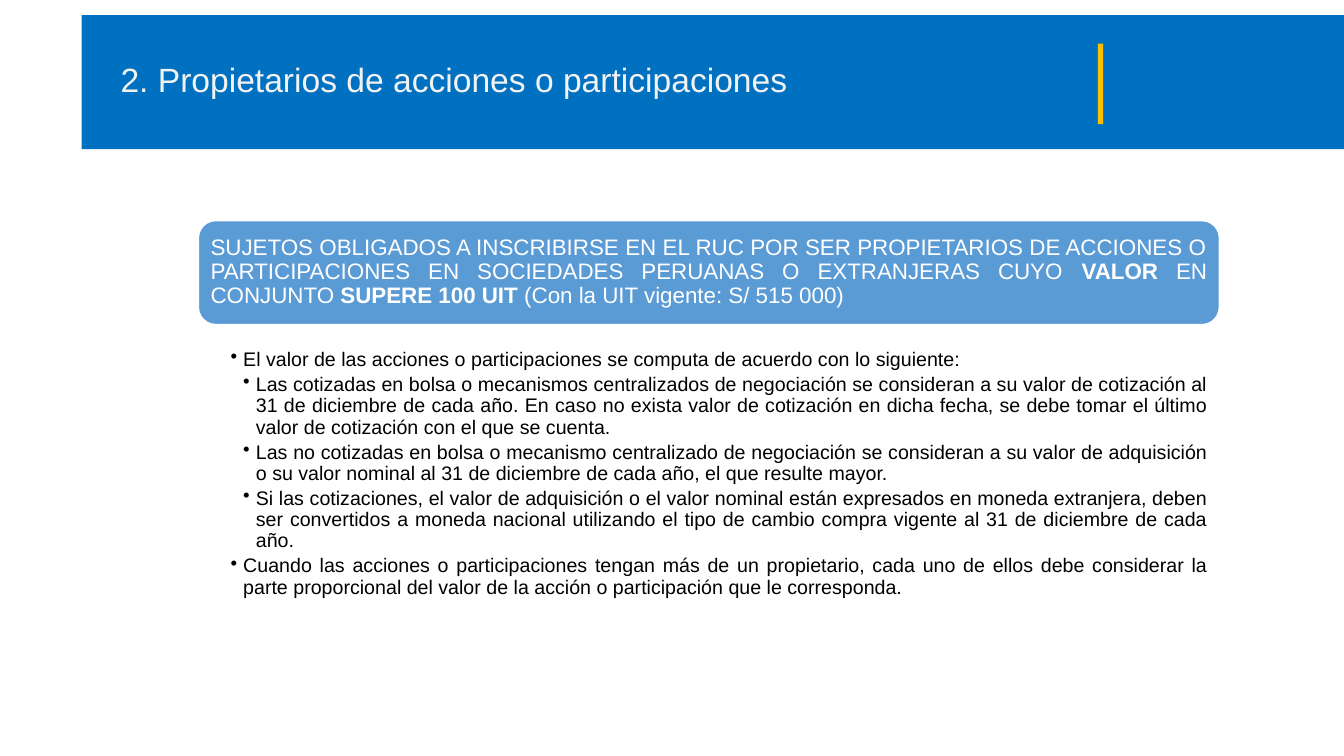
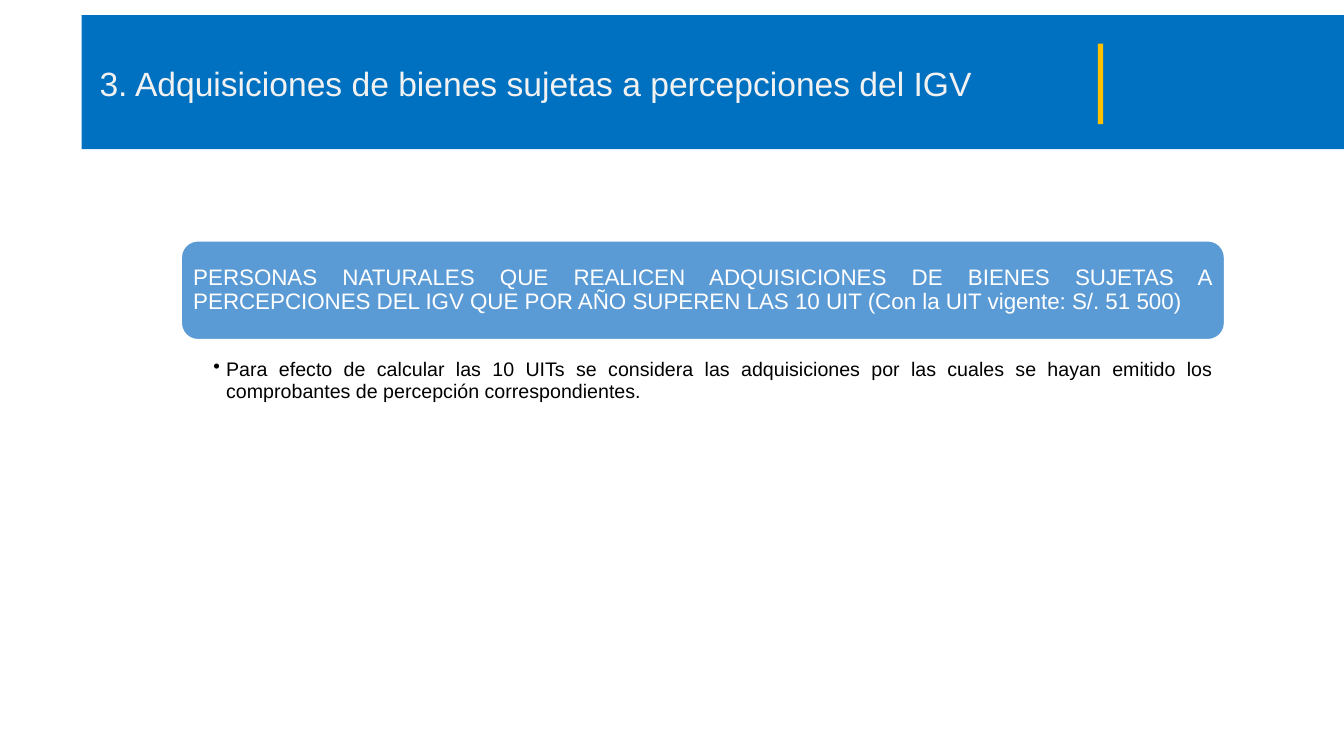
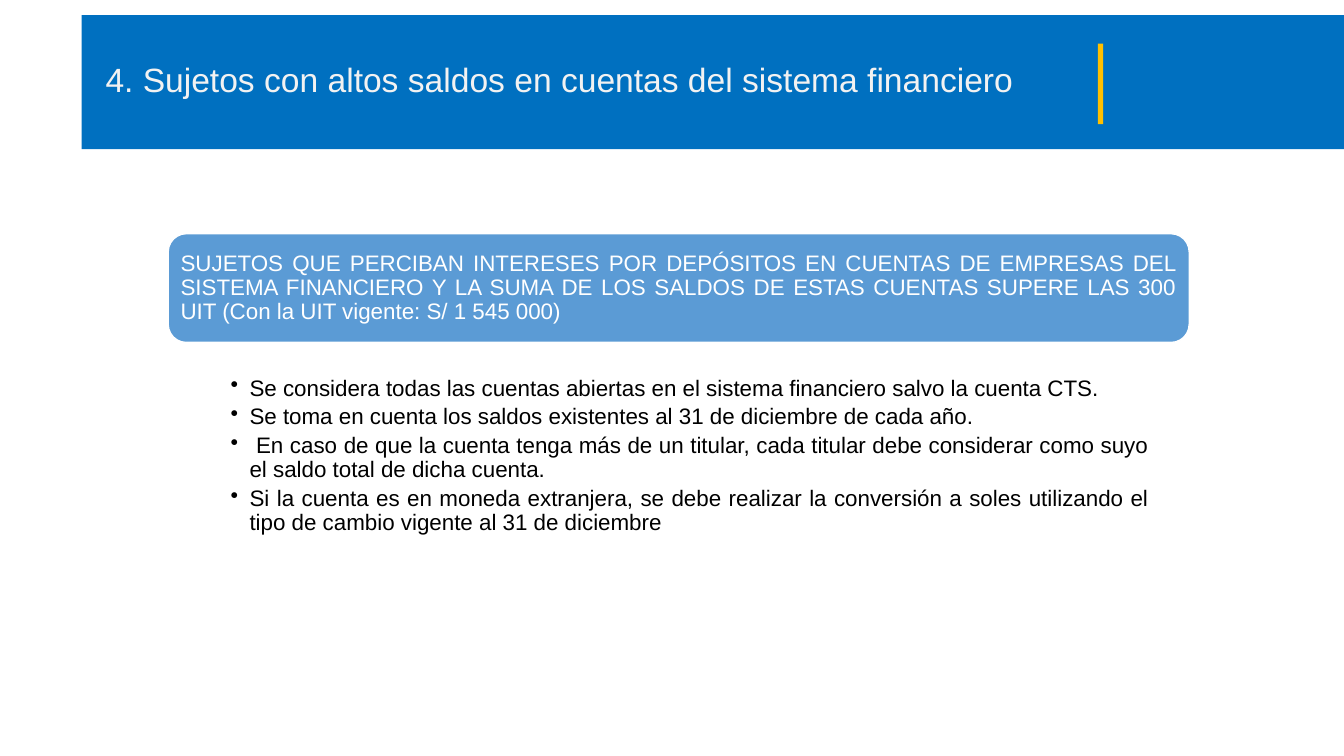
"""Build three slides on who must register in the RUC."""
from lxml import etree
from pptx import Presentation
from pptx import util as u
from pptx.dml.color import RGBColor
from pptx.enum import shapes, text
from pptx.oxml.ns import qn

BLUE = RGBColor(0x00, 0x70, 0xC0)
YELLOW = RGBColor(0xFF, 0xC0, 0x00)
SKY = RGBColor(0x5B, 0x9B, 0xD5)
WHITE = RGBColor(0xFF, 0xFF, 0xFF)
PALE = RGBColor(0xF2, 0xF2, 0xF2)
BLACK = RGBColor(0x00, 0x00, 0x00)

FONT = "Arial"
SLIDE_SIZE = (33.87, 19.05)
BAND_LEFT = 2.06
BAND = (BAND_LEFT, 0.38, SLIDE_SIZE[0] - BAND_LEFT, 3.38)
ACCENT = (27.67, 1.1, 0.13, 2.03)
TITLE_HEIGHT = 1.27

JUSTIFIED = {"alignment": text.PP_ALIGN.JUSTIFY, "line_spacing": 0.9}
TITLE_INSETS = {"word_wrap": True}
HEADING_INSETS = {
    "word_wrap": True, "vertical_anchor": text.MSO_ANCHOR.MIDDLE,
    "margin_left": u.Cm(0.18), "margin_right": u.Cm(0.18),
    "margin_top": u.Cm(0.18), "margin_bottom": u.Cm(0.18),
}
RULES_INSETS = {
    "word_wrap": True, "margin_left": u.Cm(0.81), "margin_right": u.Cm(0.28),
    "margin_top": u.Cm(0.05), "margin_bottom": u.Cm(0.05),
}

TOPICS = [
    {
        "title": "2. Propietarios de acciones o participaciones",
        "title_at": (2.79, 1.35),
        "heading": [
            ("SUJETOS OBLIGADOS A INSCRIBIRSE EN EL RUC POR SER PROPIETARIOS DE ACCIONES O "
             "PARTICIPACIONES EN SOCIEDADES PERUANAS O EXTRANJERAS CUYO ", False),
            ("VALOR", True),
            (" EN CONJUNTO ", False),
            ("SUPERE 100 UIT ", True),
            ("(Con la UIT vigente: S/ 515 000)", False),
        ],
        "heading_at": (5, 5.56, 25.73, 2.62),
        "rules": [
            (1, "El valor de las acciones o participaciones se computa de acuerdo con lo siguiente:"),
            (2, "Las cotizadas en bolsa o mecanismos centralizados de negociación se consideran a su "
                "valor de cotización al 31 de diciembre de cada año. En caso no exista valor de "
                "cotización en dicha fecha, se debe tomar el último valor de cotización con el que "
                "se cuenta."),
            (2, "Las no cotizadas en bolsa o mecanismo centralizado de negociación se consideran a su "
                "valor de adquisición o su valor nominal al 31 de diciembre de cada año, el que "
                "resulte mayor."),
            (2, "Si las cotizaciones, el valor de adquisición o el valor nominal están expresados en "
                "moneda extranjera, deben ser convertidos a moneda nacional utilizando el tipo de "
                "cambio compra vigente al 31 de diciembre de cada año."),
            (1, "Cuando las acciones o participaciones tengan más de un propietario, cada uno de ellos "
                "debe considerar la parte proporcional del valor de la acción o participación que le "
                "corresponda."),
        ],
        "rules_at": (5, 8.76, 25.73, 6.81),
        "rules_size": 14,
        "indent": 0.32,
    },
    {
        "title": "3. Adquisiciones de bienes sujetas a percepciones del IGV",
        "title_at": (2.26, 1.47),
        "heading": [
            ("PERSONAS NATURALES QUE REALICEN ADQUISICIONES DE BIENES SUJETAS A PERCEPCIONES DEL IGV "
             "QUE POR AÑO SUPEREN LAS 10 UIT (Con la UIT vigente: S/. 51 500)", False),
        ],
        "heading_at": (4.57, 6.07, 26.29, 2.49),
        "rules": [
            (1, "Para efecto de calcular las 10 UITs se considera las adquisiciones por las cuales se "
                "hayan emitido los comprobantes de percepción correspondientes."),
        ],
        "rules_at": (4.57, 9.02, 26.29, 6.78),
        "rules_size": 14,
        "indent": 0.32,
    },
    {
        "title": "4. Sujetos con altos saldos en cuentas del sistema financiero",
        "title_at": (2.41, 1.35),
        "heading": [
            ("SUJETOS QUE PERCIBAN INTERESES POR DEPÓSITOS EN CUENTAS DE EMPRESAS DEL SISTEMA "
             "FINANCIERO Y LA SUMA DE LOS SALDOS DE ESTAS CUENTAS SUPERE LAS 300 UIT (Con la UIT "
             "vigente: S/ 1 545 000)", False),
        ],
        "heading_at": (4.24, 5.89, 25.73, 2.74),
        "rules": [
            (1, "Se considera todas las cuentas abiertas en el sistema financiero salvo la cuenta CTS."),
            (1, "Se toma en cuenta los saldos existentes al 31 de diciembre de cada año."),
            (1, " En caso de que la cuenta tenga más de un titular, cada titular debe considerar como "
                "suyo el saldo total de dicha cuenta."),
            (1, "Si la cuenta es en moneda extranjera, se debe realizar la conversión a soles "
                "utilizando el tipo de cambio vigente al 31 de diciembre"),
        ],
        "rules_at": (5, 9.45, 24.23, 9),
        "rules_size": 16,
        "indent": 0.48,
    },
]


def apply(target, values):
    for name, value in values.items():
        setattr(target, name, value)


def place(box):
    return [u.Cm(length) for length in box]


def write(paragraph, runs, size, color):
    for words, bold in runs:
        run = paragraph.add_run()
        run.text = words
        apply(run.font, {"name": FONT, "size": u.Pt(size), "bold": bold})
        run.font.color.rgb = color


def add_block(slide, preset, box, fill):
    block = slide.shapes.add_shape(preset, *place(box))
    block.shadow.inherit = False
    block.fill.solid()
    block.fill.fore_color.rgb = fill
    block.line.fill.background()
    return block


def add_text_frame(slide, box, insets):
    frame = slide.shapes.add_textbox(*place(box)).text_frame
    apply(frame, insets)
    return frame


def share_band(layout, slide):
    for box, fill in ((BAND, BLUE), (ACCENT, YELLOW)):
        stripe = add_block(slide, shapes.MSO_SHAPE.RECTANGLE, box, fill)
        layout.shapes.element.append(stripe.element)


def add_title(slide, topic):
    left, top = topic["title_at"]
    box = (left, top, SLIDE_SIZE[0] - left, TITLE_HEIGHT)
    frame = add_text_frame(slide, box, TITLE_INSETS)
    write(frame.paragraphs[0], [(topic["title"], False)], 24, PALE)


def add_heading(slide, topic):
    heading = add_block(slide, shapes.MSO_SHAPE.ROUNDED_RECTANGLE, topic["heading_at"], SKY)
    heading.line.color.rgb = WHITE
    heading.line.width = u.Pt(1)
    apply(heading.text_frame, HEADING_INSETS)
    paragraph = heading.text_frame.paragraphs[0]
    apply(paragraph, JUSTIFIED)
    write(paragraph, topic["heading"], 16, WHITE)


def add_rules(slide, topic):
    frame = add_text_frame(slide, topic["rules_at"], RULES_INSETS)
    size = topic["rules_size"]
    indent = u.Cm(topic["indent"])
    for number, (level, words) in enumerate(topic["rules"]):
        paragraph = frame.add_paragraph() if number else frame.paragraphs[0]
        apply(paragraph, JUSTIFIED)
        apply(paragraph, {"level": level, "space_after": u.Pt(size * 0.2)})
        properties = paragraph._p.get_or_add_pPr()
        properties.set("marL", str(indent * level))
        properties.set("indent", str(-indent))
        etree.SubElement(properties, qn("a:buChar")).set("char", "•")
        write(paragraph, [(words, False)], size, BLACK)


def main():
    deck = Presentation()
    deck.slide_width, deck.slide_height = place(SLIDE_SIZE)
    blank = deck.slide_layouts[6]
    for number, topic in enumerate(TOPICS):
        slide = deck.slides.add_slide(blank)
        if number == 0:
            share_band(blank, slide)
        for add_part in (add_title, add_heading, add_rules):
            add_part(slide, topic)
    deck.save("out.pptx")


if __name__ == "__main__":
    main()
